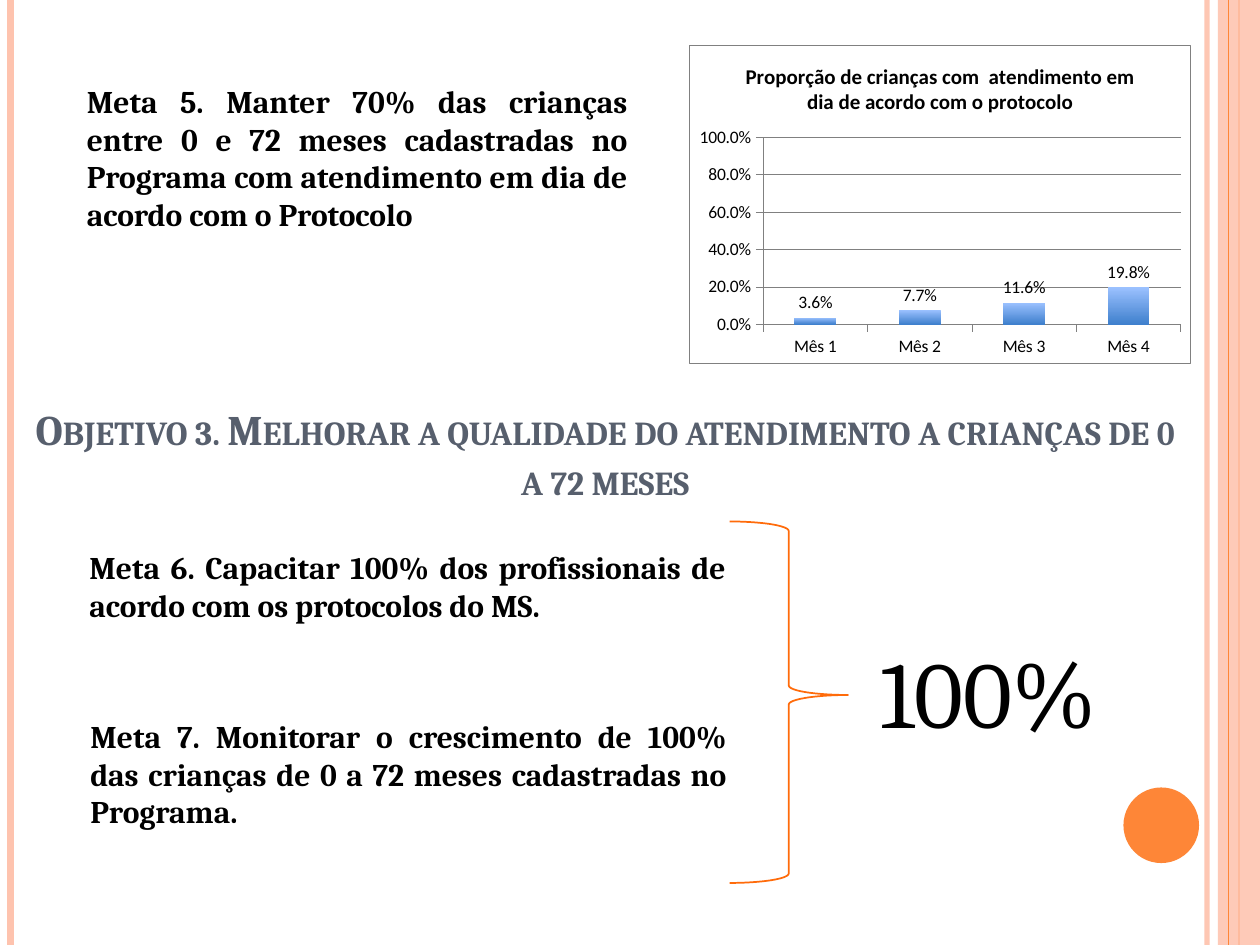
import pptx
import pptx.chart.data
import pptx.dml.color
import pptx.enum.chart
import pptx.enum.shapes
import pptx.enum.text
import pptx.oxml
import pptx.oxml.ns
import pptx.util
from lxml import etree

Pt = pptx.util.Pt
RGBColor = pptx.dml.color.RGBColor
Align = pptx.enum.text.PP_ALIGN
Anchor = pptx.enum.text.MSO_ANCHOR
Shape = pptx.enum.shapes.MSO_SHAPE

BLACK = RGBColor(0x00, 0x00, 0x00)
GRAY = RGBColor(0x80, 0x80, 0x80)
SLATE = RGBColor(0x57, 0x5F, 0x6D)
PEACH = RGBColor(0xFE, 0xC3, 0xAE)
ORANGE = RGBColor(0xFE, 0x86, 0x37)
BRACE_ORANGE = RGBColor(0xFF, 0x6B, 0x0A)
LIGHT_BLUE = RGBColor(0x9B, 0xC1, 0xFF)
BLUE = RGBColor(0x3F, 0x80, 0xCD)

SLIDE_WIDTH, SLIDE_HEIGHT = 720, 540
CHART_TITLE = "Proporção de crianças com  atendimento em dia de acordo com o protocolo"
MONTH_VALUES = {"Mês 1": 0.036, "Mês 2": 0.077, "Mês 3": 0.116, "Mês 4": 0.198}
FRAME_XML = (
    f'<c:spPr {pptx.oxml.ns.nsdecls("c", "a")}>'
    '<a:solidFill><a:srgbClr val="FFFFFF"/></a:solidFill>{line}</c:spPr>'
)
BORDER_XML = (
    '<a:ln w="3175"><a:solidFill><a:srgbClr val="808080"/></a:solidFill></a:ln>'
)


def set_opacity(element, percent):
    color = next(element.iter(pptx.oxml.ns.qn("a:srgbClr")))
    alpha = etree.SubElement(color, pptx.oxml.ns.qn("a:alpha"))
    alpha.set("val", str(percent * 1000))


def add_vertical_line(slide, x, color, width, opacity=100):
    line = slide.shapes.add_connector(
        pptx.enum.shapes.MSO_CONNECTOR.STRAIGHT, Pt(x), 0, Pt(x), Pt(SLIDE_HEIGHT)
    )
    line.line.color.rgb = color
    line.line.width = Pt(width)
    properties = line._element.spPr
    etree.SubElement(properties, pptx.oxml.ns.qn("a:effectLst"))
    if opacity < 100:
        set_opacity(properties, opacity)


def add_filled_shape(slide, kind, left, top, width, height, color):
    shape = slide.shapes.add_shape(kind, Pt(left), Pt(top), Pt(width), Pt(height))
    shape.shadow.inherit = False
    shape.fill.solid()
    shape.fill.fore_color.rgb = color
    shape.line.fill.background()
    return shape


def add_brace(slide, left, top, width, height):
    brace = slide.shapes.add_shape(
        Shape.RIGHT_BRACE, Pt(left), Pt(top), Pt(width), Pt(height)
    )
    brace.shadow.inherit = False
    brace.fill.background()
    brace.line.color.rgb = BRACE_ORANGE
    brace.line.width = Pt(1)
    brace.adjustments[0] = 0.08
    brace.adjustments[1] = 0.48


def add_text(slide, text, left, top, width, height, *, size=18, bold=True,
             color=BLACK, align=Align.JUSTIFY, anchor=Anchor.TOP, wrap=True,
             small_caps=False, bottom_margin=3.6):
    box = slide.shapes.add_textbox(Pt(left), Pt(top), Pt(width), Pt(height))
    frame = box.text_frame
    frame.word_wrap = wrap
    frame.vertical_anchor = anchor
    frame.margin_bottom = Pt(bottom_margin)
    paragraph = frame.paragraphs[0]
    paragraph.alignment = align
    run = paragraph.add_run()
    run.text = text
    set_font(run.font, "Cambria", size, color, bold)
    if small_caps:
        run.font._element.set("cap", "small")


def set_font(font, name, size, color=BLACK, bold=False):
    font.name = name
    font.size = Pt(size)
    font.bold = bold
    font.color.rgb = color


def set_thin_line(line):
    line.color.rgb = GRAY
    line.width = Pt(0.25)


def add_chart(slide, left, top, width, height):
    data = pptx.chart.data.CategoryChartData(number_format="0.0%")
    data.categories = list(MONTH_VALUES)
    data.add_series(CHART_TITLE, list(MONTH_VALUES.values()))
    chart = slide.shapes.add_chart(
        pptx.enum.chart.XL_CHART_TYPE.COLUMN_CLUSTERED,
        Pt(left), Pt(top), Pt(width), Pt(height), data,
    ).chart
    set_font(chart.font, "Calibri", 10)
    chart.has_legend = False
    chart.has_title = True
    chart.chart_title.include_in_layout = False
    title_run = chart.chart_title.text_frame.paragraphs[0].add_run()
    title_run.text = CHART_TITLE
    set_font(title_run.font, "Calibri", 12, bold=True)

    for axis in (chart.category_axis, chart.value_axis):
        axis.major_tick_mark = pptx.enum.chart.XL_TICK_MARK.OUTSIDE
        set_font(axis.tick_labels.font, "Calibri", 10)
        set_thin_line(axis.format.line)
    value_axis = chart.value_axis
    value_axis.minimum_scale = 0
    value_axis.maximum_scale = 1
    value_axis.major_unit = 0.2
    value_axis.tick_labels.number_format = "0.0%"
    value_axis.tick_labels.number_format_is_linked = False
    set_thin_line(value_axis.major_gridlines.format.line)

    plot = chart.plots[0]
    plot.gap_width = 150
    plot.vary_by_categories = False
    plot.has_data_labels = True
    labels = plot.data_labels
    labels.show_value = True
    labels.number_format = "0.0%"
    labels.number_format_is_linked = False
    labels.position = pptx.enum.chart.XL_LABEL_POSITION.OUTSIDE_END
    set_font(labels.font, "Calibri", 10)

    fill = plot.series[0].format.fill
    fill.gradient()
    fill.gradient_angle = 270
    for stop, color in zip(fill.gradient_stops, (LIGHT_BLUE, BLUE)):
        stop.color.rgb = color

    chart_space = chart._chartSpace
    chart_space.chart.addnext(pptx.oxml.parse_xml(FRAME_XML.format(line=BORDER_XML)))
    chart_space.chart.plotArea.append(pptx.oxml.parse_xml(FRAME_XML.format(line="")))


def add_decoration(slide):
    add_vertical_line(slide, 689.8, PEACH, 3, opacity=93)
    add_vertical_line(slide, 6, PEACH, 4.5)
    add_vertical_line(slide, 708, ORANGE, 1.5)
    band = add_filled_shape(slide, Shape.RECTANGLE, 696, 0, 24, SLIDE_HEIGHT, PEACH)
    set_opacity(band._element.spPr, 87)
    add_vertical_line(slide, 702, ORANGE, 0.75)
    add_filled_shape(slide, Shape.OVAL, 642, 450, 43.2, 43.2, ORANGE)


def main():
    presentation = pptx.Presentation()
    presentation.slide_width = Pt(SLIDE_WIDTH)
    presentation.slide_height = Pt(SLIDE_HEIGHT)
    slide = presentation.slides.add_slide(presentation.slide_layouts[6])

    add_decoration(slide)
    add_chart(slide, 394, 26, 286.5, 181.5)
    add_text(slide, "Meta 5. Manter 70% das crianças entre 0 e 72 meses cadastradas no "
             "Programa com atendimento em dia de acordo com o Protocolo",
             42.5, 43.2, 323.3, 94.3)
    add_text(slide, "Objetivo 3. Melhorar a qualidade do atendimento a crianças de 0 "
             "a 72 meses", 8.6, 230.4, 674.6, 90, size=24, color=SLATE,
             align=Align.CENTER, anchor=Anchor.BOTTOM, small_caps=True,
             bottom_margin=32.4)
    add_text(slide, "Meta 6. Capacitar 100% dos profissionais de acordo com os "
             "protocolos do MS.", 44, 309.6, 378, 51)
    add_text(slide, "Meta 7. Monitorar o crescimento de 100% das crianças de 0 a 72 "
             "meses cadastradas no Programa.", 44.5, 406, 378, 72.7)
    add_text(slide, "100%", 496, 358.5, 151.2, 72.7, size=54, bold=False,
             align=Align.LEFT, wrap=False)
    add_brace(slide, 416.9, 298, 67.7, 206.6)

    presentation.save("out.pptx")


if __name__ == "__main__":
    main()
